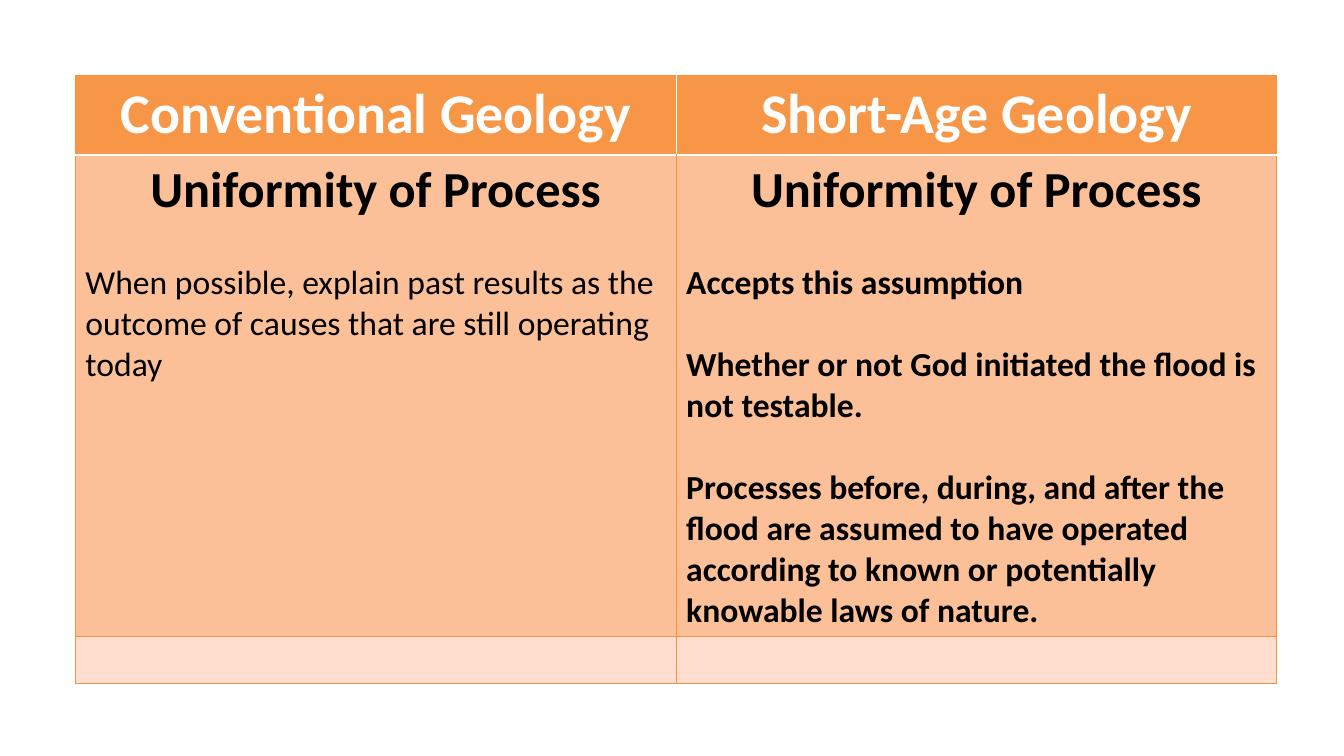
import pptx
import pptx.util
import pptx.dml.color
import pptx.enum.text
import pptx.oxml
import pptx.oxml.ns
from pptx.util import Cm, Pt

# Content: each paragraph is (text, style)
ROWS = [
    [
        [("Conventional Geology", "header")],
        [("Short-Age Geology", "header")],
    ],
    [
        [
            ("Uniformity of Process", "heading"),
            ("When possible, explain past results as the outcome of causes "
             "that are still operating today", "plain"),
        ],
        [
            ("Uniformity of Process", "heading"),
            ("Accepts this assumption", "strong"),
            ("Whether or not God initiated the flood is not testable.", "strong"),
            ("Processes before, during, and after the flood are assumed to have "
             "operated according to known or potentially knowable laws of nature.",
             "strong"),
        ],
    ],
    [[], []],
]

COLORS = {
    "white": "FFFFFF",
    "black": "000000",
    "header": "F79646",
    "body": "FCC099",
    "footer": "FFDDCF",
    "line": "F69240",
}
ROW_FILLS = ["header", "body", "footer"]
ROW_HEIGHTS = [Cm(2), Cm(12.05), Cm(1.17)]
COLUMN_WIDTH = Cm(15.14)
MARGIN = Cm(1.9)

# Style: size, bold, centred, colour, space before
STYLES = {
    "header": (40, True, True, "white", 0),
    "heading": (36, True, True, "black", 0),
    "plain": (24, False, False, "black", 29.3),
    "strong": (24, True, False, "black", 29.3),
}


def rgb(name):
    return pptx.dml.color.RGBColor.from_string(COLORS[name])


def add_border(cell, side, color, width):
    """Append one cell border; sides must come in the order L, R, T, B."""
    line = pptx.oxml.parse_xml(
        f'<a:ln{side} {pptx.oxml.ns.nsdecls("a")} w="{Pt(width)}">'
        f'<a:solidFill><a:srgbClr val="{COLORS[color]}"/></a:solidFill>'
        f'</a:ln{side}>'
    )
    cell._tc.get_or_add_tcPr().append(line)


def write_paragraphs(cell, paragraphs):
    frame = cell.text_frame
    for index, (text, style) in enumerate(paragraphs):
        para = frame.paragraphs[0] if index == 0 else frame.add_paragraph()
        size, bold, centred, color, gap = STYLES[style]
        para.text = text
        para.space_before = Pt(gap)
        align = pptx.enum.text.PP_ALIGN
        para.alignment = align.CENTER if centred else align.LEFT
        para.font.name = "Calibri"
        para.font.size = Pt(size)
        para.font.bold = bold
        para.font.color.rgb = rgb(color)


# Page
deck = pptx.Presentation()
deck.slide_width, deck.slide_height = Cm(33.87), Cm(19.05)
page = deck.slides.add_slide(deck.slide_layouts[6])

# Comparison table
column_count = len(ROWS[0])
comparison = page.shapes.add_table(
    len(ROWS), column_count, MARGIN, MARGIN,
    COLUMN_WIDTH * column_count, sum(ROW_HEIGHTS),
).table
for column in comparison.columns:
    column.width = COLUMN_WIDTH

for r, row in enumerate(ROWS):
    comparison.rows[r].height = ROW_HEIGHTS[r]
    for c, paragraphs in enumerate(row):
        cell = comparison.cell(r, c)
        write_paragraphs(cell, paragraphs)

        # Borders: no divider inside the header, a white rule below it
        for side, is_outer in (("L", c == 0), ("R", c == column_count - 1)):
            if r > 0 or is_outer:
                add_border(cell, side, "line", 0.75)
        top, bottom = ("line", 0.75), ("line", 0.75)
        if r == 0:
            bottom = ("white", 2)
        elif r == 1:
            top = ("white", 2)
        add_border(cell, "T", *top)
        add_border(cell, "B", *bottom)

        cell.fill.solid()
        cell.fill.fore_color.rgb = rgb(ROW_FILLS[r])

deck.save("out.pptx")
